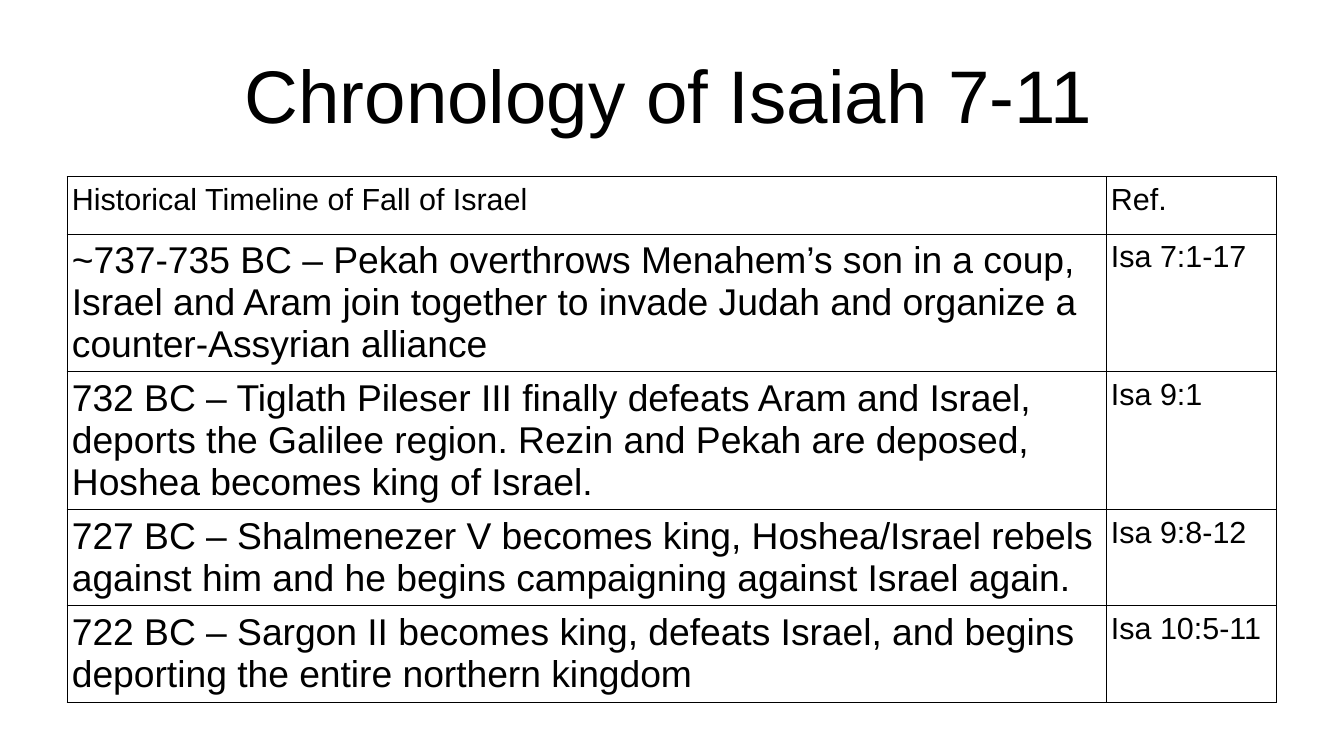
"""Build a slide with a timeline table for Isaiah 7-11."""
from lxml import etree
from pptx import Presentation
from pptx.dml.color import RGBColor
from pptx.enum.text import MSO_ANCHOR, MSO_AUTO_SIZE, PP_ALIGN
from pptx.oxml.ns import qn
from pptx.util import Inches, Pt

TITLE = "Chronology of Isaiah 7-11"
ROWS = [
    ("Historical Timeline of Fall of Israel", "Ref."),
    ("~737-735 BC – Pekah overthrows Menahem’s son in a coup, Israel and Aram join "
     "together to invade Judah and organize a counter-Assyrian alliance", "Isa 7:1-17"),
    ("732 BC – Tiglath Pileser III finally defeats Aram and Israel, deports the Galilee "
     "region. Rezin and Pekah are deposed, Hoshea becomes king of Israel.", "Isa 9:1"),
    ("727 BC – Shalmenezer V becomes king, Hoshea/Israel rebels against him and he "
     "begins campaigning against Israel again.", "Isa 9:8-12"),
    ("722 BC – Sargon II becomes king, defeats Israel, and begins deporting the entire "
     "northern kingdom", "Isa 10:5-11"),
]
COLUMN_WIDTHS = [8.52, 1.4]
ROW_HEIGHTS = [0.47, 1.13, 1.13, 0.79, 0.79]
BLACK = RGBColor(0x00, 0x00, 0x00)
FONT = "Arial"
TITLE_SIZE, EVENT_SIZE, SMALL_SIZE = 44, 22, 18
BORDER_WIDTH = Pt(0.75)
MIDDLE, TOP = MSO_ANCHOR.MIDDLE, MSO_ANCHOR.TOP
CENTER, LEFT = PP_ALIGN.CENTER, PP_ALIGN.LEFT
NO_AUTOFIT = MSO_AUTO_SIZE.NONE


def format_paragraph(paragraph, size, alignment):
    paragraph.alignment = alignment
    paragraph.font.name = FONT
    paragraph.font.size = Pt(size)
    paragraph.font.bold = False
    paragraph.font.color.rgb = BLACK


def add_borders(cell):
    properties = cell._tc.get_or_add_tcPr()
    for position, side in enumerate(("lnL", "lnR", "lnT", "lnB")):
        line = etree.Element(qn(f"a:{side}"), w=str(BORDER_WIDTH))
        fill = etree.SubElement(line, qn("a:solidFill"))
        etree.SubElement(fill, qn("a:srgbClr"), val=str(BLACK))
        properties.insert(position, line)


def add_title(slide):
    title = slide.shapes.title
    title.left, title.top = Inches(0.5), Inches(0.25)
    title.width, title.height = Inches(9.97), Inches(1.04)
    frame = title.text_frame
    frame.text = TITLE
    frame.auto_size = NO_AUTOFIT
    frame.word_wrap = True
    frame.vertical_anchor = MIDDLE
    frame.margin_left = frame.margin_right = frame.margin_top = frame.margin_bottom = 0
    format_paragraph(frame.paragraphs[0], TITLE_SIZE, CENTER)


def fill_cell(cell, text, size):
    cell.text = text
    cell.fill.background()
    cell.vertical_anchor = TOP
    cell.margin_left = cell.margin_right = Inches(0.04)
    cell.margin_top = cell.margin_bottom = Inches(0.05)
    format_paragraph(cell.text_frame.paragraphs[0], size, LEFT)
    add_borders(cell)


def add_timeline(slide):
    table = slide.shapes.add_table(
        len(ROWS), len(COLUMN_WIDTHS), Inches(0.55), Inches(1.45),
        Inches(sum(COLUMN_WIDTHS)), Inches(sum(ROW_HEIGHTS))).table
    table.first_row = table.horz_banding = False
    for column, width in zip(table.columns, COLUMN_WIDTHS):
        column.width = Inches(width)
    for row, height in zip(table.rows, ROW_HEIGHTS):
        row.height = Inches(height)
    for row_index, texts in enumerate(ROWS):
        for column_index, text in enumerate(texts):
            is_event = row_index > 0 and column_index == 0
            size = EVENT_SIZE if is_event else SMALL_SIZE
            fill_cell(table.cell(row_index, column_index), text, size)


def main():
    presentation = Presentation()
    presentation.slide_width = Inches(11.02)
    presentation.slide_height = Inches(6.2)
    slide = presentation.slides.add_slide(presentation.slide_layouts.get_by_name("Title Only"))
    add_title(slide)
    add_timeline(slide)
    presentation.save("out.pptx")


if __name__ == "__main__":
    main()
